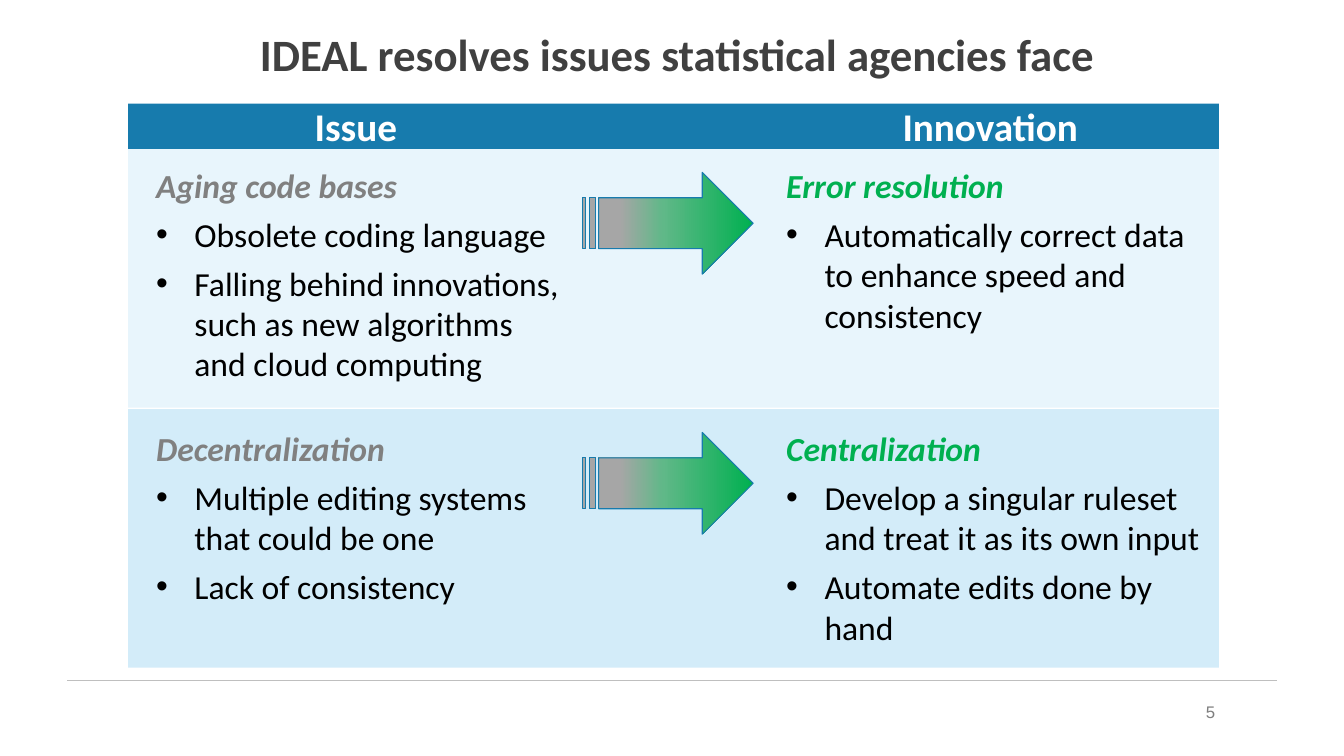
from lxml import etree
from pptx import Presentation
from pptx import util as u
from pptx.dml.color import RGBColor
from pptx.enum import shapes, text
from pptx.oxml import ns

WHITE = RGBColor(0xFF, 0xFF, 0xFF)
BLACK = RGBColor(0x00, 0x00, 0x00)
CHARCOAL = RGBColor(0x40, 0x40, 0x40)
GRAY = RGBColor(0x80, 0x80, 0x80)
NUMBER_GRAY = RGBColor(0x7F, 0x7F, 0x7F)
RULE_GRAY = RGBColor(0xBF, 0xBF, 0xBF)
ARROW_GRAY = RGBColor(0xA6, 0xA6, 0xA6)
ARROW_MID = RGBColor(0x60, 0xB8, 0x88)
GREEN = RGBColor(0x00, 0xB0, 0x50)
BLUE = RGBColor(0x17, 0x7B, 0xAD)
PALE_BLUE = RGBColor(0xE8, 0xF5, 0xFC)
LIGHT_BLUE = RGBColor(0xD3, 0xEC, 0xF9)

# Positions and sizes in percent of the slide's width and height
PANEL_LEFT, PANEL_WIDTH = 9.53, 81.17
HEADER_TOP, HEADER_HEIGHT = 13.7, 6.0
BAND_TOP, BAND_HEIGHT, BAND_PITCH = 19.73, 34.2, 34.4
ISSUE_LEFT, ISSUE_WIDTH = 10.88, 31.88
INNOVATION_LEFT, INNOVATION_WIDTH = 57.76, 32.78
TEXT_TOP, TEXT_PITCH, TEXT_HEIGHT = 21.2, 34.8, 31.2
ARROW_LEFT, ARROW_TOP = 43.36, 22.8

ROWS = [
    (PALE_BLUE,
     ("Aging code bases",
      ["Obsolete coding language",
       "Falling behind innovations, such as new algorithms and cloud computing"]),
     ("Error resolution",
      ["Automatically correct data to enhance speed and consistency"])),
    (LIGHT_BLUE,
     ("Decentralization",
      ["Multiple editing systems that could be one",
       "Lack of consistency"]),
     ("Centralization",
      ["Develop a singular ruleset and treat it as its own input",
       "Automate edits done by hand"])),
]


class SlideBuilder:
    """Places styled elements on one slide, in percent of its size."""

    def __init__(self, deck):
        self.deck = deck
        self.slide = deck.slides.add_slide(deck.slide_layouts[5])
        self.shapes = self.slide.shapes

    def box(self, left, top, width, height):
        across, down = self.deck.slide_width / 100, self.deck.slide_height / 100
        return (u.Emu(round(left * across)), u.Emu(round(top * down)),
                u.Emu(round(width * across)), u.Emu(round(height * down)))

    def style(self, paragraph, size, color, bold=False, italic=False, font="Calibri"):
        face = paragraph.font
        face.name, face.size, face.bold, face.italic = font, u.Pt(size), bold, italic
        face.color.rgb = color

    def title(self, words, *area):
        heading = self.shapes.title
        heading.left, heading.top, heading.width, heading.height = self.box(*area)
        self.set_line(heading.text_frame, words, 32, CHARCOAL, bold=True)

    def set_line(self, frame, words, size, color, align=text.PP_ALIGN.CENTER, **look):
        frame.word_wrap = True
        frame.auto_size = text.MSO_AUTO_SIZE.NONE
        frame.vertical_anchor = text.MSO_ANCHOR.MIDDLE
        line = frame.paragraphs[0]
        line.text, line.alignment = words, align
        self.style(line, size, color, **look)

    def label(self, words, area, size, color, **look):
        frame = self.shapes.add_textbox(*self.box(*area)).text_frame
        self.set_line(frame, words, size, color, **look)

    def band(self, color, *area):
        band = self.shapes.add_shape(shapes.MSO_SHAPE.RECTANGLE, *self.box(*area))
        band.shadow.inherit = False
        band.fill.solid()
        band.fill.fore_color.rgb = color
        band.line.fill.background()

    def points(self, heading, color, bullets, *area):
        frame = self.shapes.add_textbox(*self.box(*area)).text_frame
        frame.word_wrap = True
        lead = frame.paragraphs[0]
        lead.text, lead.space_after = heading, u.Pt(6)
        self.style(lead, 24, color, bold=True, italic=True)
        for words in bullets:
            point = frame.add_paragraph()
            point.text, point.space_after = words, u.Pt(6)
            props = point._p.get_or_add_pPr()
            props.set("marL", str(u.Inches(0.38)))
            props.set("indent", str(-u.Inches(0.38)))
            etree.SubElement(props, ns.qn("a:buFont")).set("typeface", "Arial")
            etree.SubElement(props, ns.qn("a:buChar")).set("char", "•")
            self.style(point, 24, BLACK)

    def arrow(self, *area):
        arrow = self.shapes.add_shape(
            shapes.MSO_SHAPE.STRIPED_RIGHT_ARROW, *self.box(*area))
        arrow.shadow.inherit = False
        arrow.line.color.rgb = BLUE
        arrow.line.width = u.Pt(0.75)
        arrow.fill.gradient()
        gradient = arrow._element.spPr.find(ns.qn("a:gradFill"))
        stops = gradient.find(ns.qn("a:gsLst"))
        for stop in list(stops):
            stops.remove(stop)
        for share, color in ((0, GREEN), (53, ARROW_MID),
                             (78, ARROW_GRAY), (100, ARROW_GRAY)):
            stop = etree.SubElement(stops, ns.qn("a:gs"), pos=str(share * 1000))
            etree.SubElement(stop, ns.qn("a:srgbClr"), val=str(color))
        direction = gradient.find(ns.qn("a:lin"))
        direction.set("ang", str(180 * 60000))
        direction.set("scaled", "0")

    def rule(self, left, right, top):
        x, y, width, _ = self.box(left, top, right - left, 0)
        rule = self.shapes.add_connector(
            shapes.MSO_CONNECTOR.STRAIGHT, x, y, x + width, y)
        rule.line.color.rgb = RULE_GRAY
        rule.line.width = u.Pt(1)
        etree.SubElement(rule._element.spPr, ns.qn("a:effectLst"))


def main():
    deck = Presentation()
    deck.slide_width, deck.slide_height = u.Inches(13.33), u.Inches(7.5)
    page = SlideBuilder(deck)

    # Title and footer
    page.title("IDEAL resolves issues statistical agencies face", 5.4, 2.53, 90, 9.2)
    page.rule(5, 95, 90)
    page.label("5", (86.72, 92.13, 4.43, 4), 12, NUMBER_GRAY,
               align=text.PP_ALIGN.RIGHT, font="Arial")

    # Column headings
    page.band(BLUE, PANEL_LEFT, HEADER_TOP, PANEL_WIDTH, HEADER_HEIGHT)
    for heading, left in (("Issue", 9.6), ("Innovation", 56.79)):
        page.label(heading, (left, HEADER_TOP, 33.76, HEADER_HEIGHT),
                   28, WHITE, bold=True)

    # One band per issue and the innovation that answers it
    for row, (color, issue, innovation) in enumerate(ROWS):
        page.band(color, PANEL_LEFT, BAND_TOP + row * BAND_PITCH,
                  PANEL_WIDTH, BAND_HEIGHT)
        text_top = TEXT_TOP + row * TEXT_PITCH
        page.points(issue[0], GRAY, issue[1],
                    ISSUE_LEFT, text_top, ISSUE_WIDTH, TEXT_HEIGHT)
        page.points(innovation[0], GREEN, innovation[1],
                    INNOVATION_LEFT, text_top, INNOVATION_WIDTH, TEXT_HEIGHT)
        page.arrow(ARROW_LEFT, ARROW_TOP + row * BAND_PITCH, 12.68, 13.47)

    deck.save("out.pptx")


if __name__ == "__main__":
    main()
